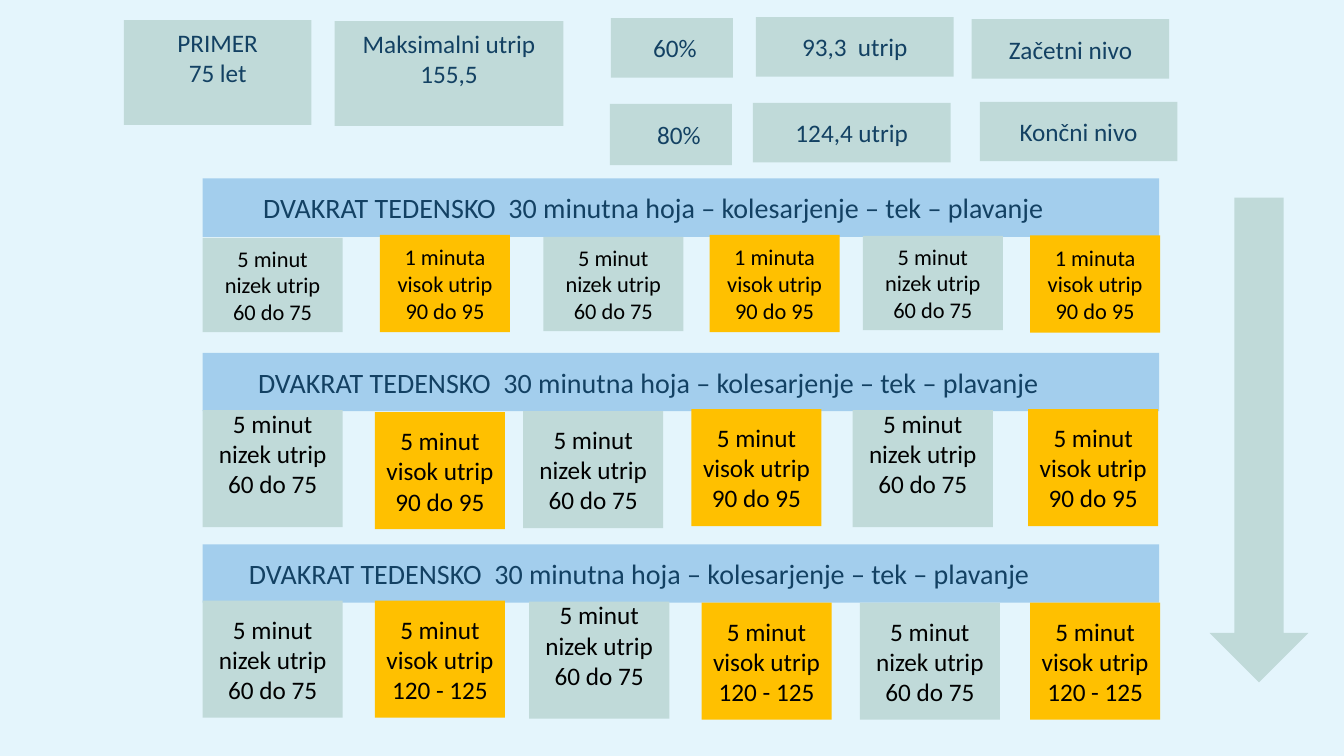
from dataclasses import dataclass
from typing import NamedTuple

from pptx import Presentation
from pptx.dml.color import RGBColor
from pptx.enum.shapes import MSO_SHAPE as Preset
from pptx.enum.text import MSO_ANCHOR as Anchor, PP_ALIGN as Align
from pptx.util import Inches, Pt

# Grid: 40 columns by 30 rows on the slide
SLIDE_WIDTH, SLIDE_HEIGHT = Inches(13.33), Inches(7.5)
COLUMN, ROW = SLIDE_WIDTH / 40, SLIDE_HEIGHT / 30


@dataclass(frozen=True)
class Theme:
    background: str = "E4F5FC"
    banner: str = "A3CEED"
    calm: str = "C0DAD9"
    intense: str = "FFC000"
    navy: str = "134163"
    black: str = "000000"
    font: str = "Calibri"
    small: int = 16
    body: int = 18
    heading: int = 20


THEME = Theme()


class Area(NamedTuple):
    left: float
    top: float
    width: float
    height: float


@dataclass(frozen=True)
class Box:
    area: Area
    lines: tuple[str, ...]
    fill: str = THEME.calm
    color: str = THEME.navy
    size: int = THEME.body
    align: Align = Align.CENTER
    indent: float = 0  # extra left margin, in columns
    lift: float = 0  # extra bottom margin, in rows


class Place(NamedTuple):
    left: float
    top: float
    lift: float = 0


@dataclass(frozen=True)
class Session:
    top: float
    indent: float
    calm_lines: tuple[str, ...]
    intense_lines: tuple[str, ...]
    calm_height: float
    intense_height: float
    size: int
    places: tuple[Place, ...]


LINE = 1.2  # one line of body text, in rows
BANNER_TEXT = "DVAKRAT TEDENSKO  30 minutna hoja – kolesarjenje – tek – plavanje"
CALM_LINES = ("5 minut", "nizek utrip", "60 do 75")

# Example and heart rate levels
LEVELS = (
    Box(Area(3.69, 0.8, 5.58, 4.16), ("PRIMER", "75 let"), lift=LINE),
    Box(Area(9.96, 0.84, 6.81, 4.16), ("Maksimalni utrip 155,5",), lift=LINE),
    Box(Area(18.18, 0.72, 3.63, 2.36), ("60%",), indent=0.18),
    Box(Area(18.15, 4.12, 3.63, 2.44), ("80%",), indent=0.48),
    Box(Area(22.5, 0.68, 5.88, 2.36), ("93,3  utrip",)),
    Box(Area(22.41, 4.08, 5.88, 2.36), ("124,4 utrip",)),
    Box(Area(28.92, 0.76, 5.88, 2.36), ("Začetni nivo",)),
    Box(Area(29.16, 4.04, 5.88, 2.36), ("Končni nivo",)),
)

# Training sessions: calm and intense intervals alternate
SESSIONS = (
    Session(7.08, 1.5, CALM_LINES, ("1 minuta", "visok utrip", "90 do 95"),
            3.74, 3.86, THEME.small,
            (Place(6.03, 9.44), Place(11.31, 9.32), Place(16.17, 9.4),
             Place(21.12, 9.32), Place(25.68, 9.36), Place(30.66, 9.34))),
    Session(14, 1.35, CALM_LINES, ("5 minut", "visok utrip 90 do 95"),
            4.64, 4.64, THEME.body,
            (Place(6.03, 16.28, LINE), Place(11.16, 16.36), Place(15.57, 16.32),
             Place(20.58, 16.24), Place(25.38, 16.28, LINE), Place(30.6, 16.24))),
    Session(21.6, 1.08, CALM_LINES, ("5 minut", "visok utrip 120 - 125"),
            4.64, 4.64, THEME.body,
            (Place(6.03, 23.84), Place(11.16, 23.84), Place(15.75, 23.88, LINE),
             Place(20.88, 23.92), Place(25.59, 23.92), Place(30.66, 23.92))),
)

PROGRESS_ARROW = Area(36, 7.84, 2.94, 19.24)


def add_plain_shape(slide, preset: Preset, area: Area, fill: str):
    shape = slide.shapes.add_shape(
        preset, round(area.left * COLUMN), round(area.top * ROW),
        round(area.width * COLUMN), round(area.height * ROW))
    shape.shadow.inherit = False
    shape.fill.solid()
    shape.fill.fore_color.rgb = RGBColor.from_string(fill)
    shape.line.fill.background()
    return shape


def add_box(slide, box: Box) -> None:
    frame = add_plain_shape(slide, Preset.RECTANGLE, box.area, box.fill).text_frame
    frame_format = {
        "word_wrap": True,
        "vertical_anchor": Anchor.MIDDLE,
        "margin_left": Inches(0.1) + round(box.indent * COLUMN),
        "margin_right": Inches(0.1),
        "margin_top": Inches(0.05),
        "margin_bottom": Inches(0.05) + round(box.lift * ROW),
    }
    for name, value in frame_format.items():
        setattr(frame, name, value)
    for number, line in enumerate(box.lines):
        paragraph = frame.add_paragraph() if number else frame.paragraphs[0]
        paragraph.alignment = box.align
        run = paragraph.add_run()
        run.text = line
        for name, value in {"name": THEME.font, "size": Pt(box.size)}.items():
            setattr(run.font, name, value)
        run.font.color.rgb = RGBColor.from_string(box.color)


def add_session(slide, session: Session) -> None:
    add_box(slide, Box(Area(6.03, session.top, 28.47, 2.32), (BANNER_TEXT,),
                       fill=THEME.banner, size=THEME.heading,
                       align=Align.LEFT, indent=session.indent))
    kinds = (
        (session.calm_lines, THEME.calm, 4.17, session.calm_height),
        (session.intense_lines, THEME.intense, 3.87, session.intense_height),
    )
    for number, place in enumerate(session.places):
        lines, fill, width, height = kinds[number % 2]
        add_box(slide, Box(Area(place.left, place.top, width, height), lines,
                           fill=fill, color=THEME.black, size=session.size,
                           lift=place.lift))


def main() -> None:
    presentation = Presentation()
    presentation.slide_width, presentation.slide_height = SLIDE_WIDTH, SLIDE_HEIGHT
    slide = presentation.slides.add_slide(presentation.slide_layouts[6])
    slide.background.fill.solid()
    slide.background.fill.fore_color.rgb = RGBColor.from_string(THEME.background)

    for level in LEVELS:
        add_box(slide, level)
    for session in SESSIONS:
        add_session(slide, session)
    add_plain_shape(slide, Preset.DOWN_ARROW, PROGRESS_ARROW, THEME.calm)

    presentation.save("out.pptx")


if __name__ == "__main__":
    main()
